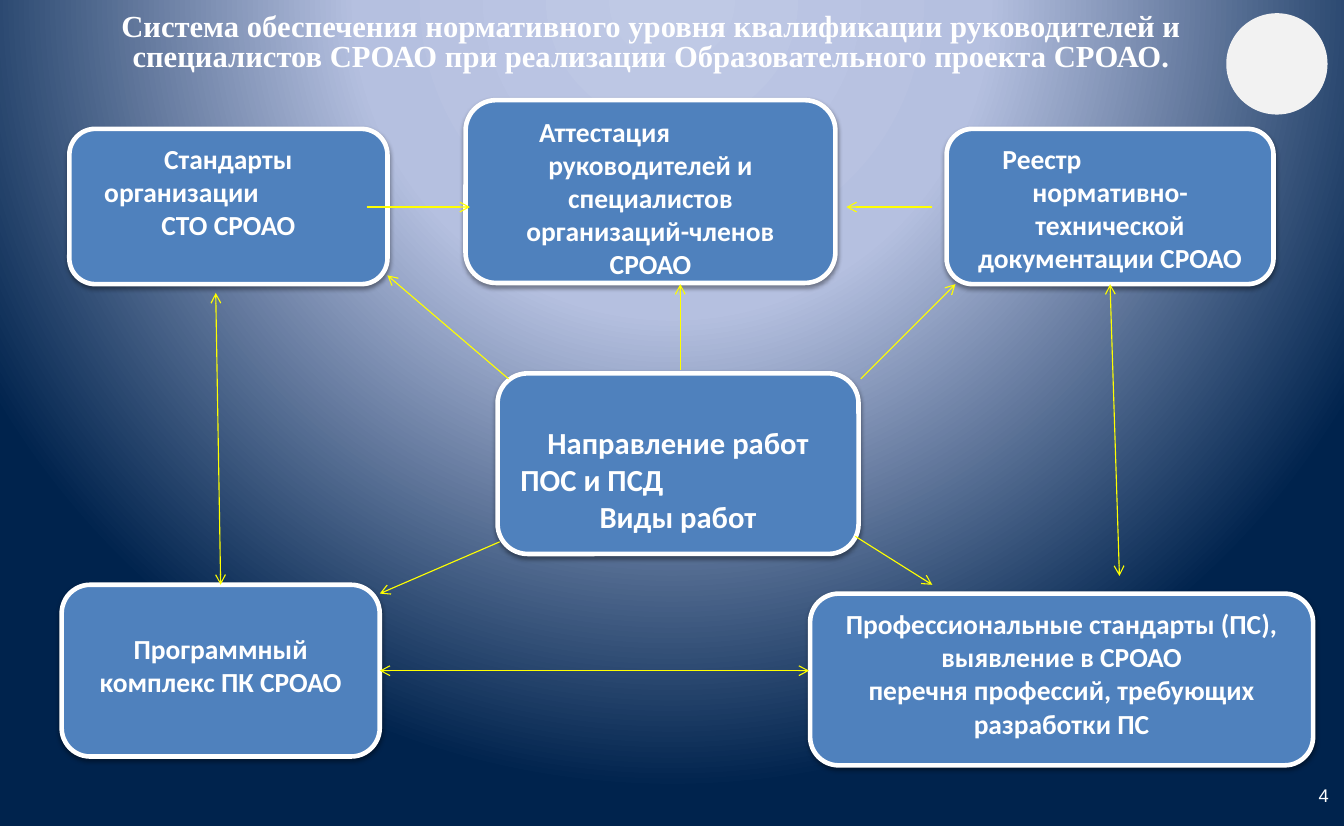
import pptx
import pptx.util
import pptx.oxml
import pptx.oxml.ns
import pptx.dml.color
import pptx.enum.shapes
import pptx.enum.text
from lxml import etree

Inches = pptx.util.Inches
Pt = pptx.util.Pt
SHAPES = pptx.enum.shapes.MSO_SHAPE
ALIGN = pptx.enum.text.PP_ALIGN
ANCHOR = pptx.enum.text.MSO_ANCHOR
qn = pptx.oxml.ns.qn
NS = pptx.oxml.ns.nsdecls("a", "p")

COLORS = {
    "box": "4F81BD", "white": "FFFFFF", "arrow": "FFFF00", "circle": "F2F2F2",
    "shadow": "000000", "glow": "BFC9E5", "haze": "B5C0E0", "night": "00234D",
}


def rgb(name):
    return pptx.dml.color.RGBColor.from_string(COLORS[name])


def style_text(paragraph, size, font, bold, align):
    paragraph.alignment = align
    for run in paragraph.runs:
        run.font.size = Pt(size)
        run.font.name = font
        run.font.bold = bold
        run.font.color.rgb = rgb("white")


deck = pptx.Presentation()
deck.slide_width = Inches(12.21)
deck.slide_height = Inches(7.5)
slide = deck.slides.add_slide(deck.slide_layouts[6])
shapes = slide.shapes

# Radial background
stops = "".join(
    f'<a:gs pos="{pos * 1000}"><a:srgbClr val="{COLORS[name]}"/></a:gs>'
    for pos, name in [(0, "glow"), (40, "haze"), (100, "night")])
background = pptx.oxml.parse_xml(
    f'<p:bg {NS}><p:bgPr><a:gradFill rotWithShape="1"><a:gsLst>{stops}</a:gsLst>'
    '<a:path path="circle"><a:fillToRect l="50000" t="-80000" r="50000" b="180000"/></a:path>'
    '</a:gradFill><a:effectLst/></p:bgPr></p:bg>')
slide.element.find(qn("p:cSld")).insert(0, background)

page_number = shapes.add_textbox(Inches(11.15), Inches(7.02), Inches(1.02), Inches(0.4))
page_number.text_frame.word_wrap = True
page_number.text_frame.vertical_anchor = ANCHOR.MIDDLE
page_number.text_frame.text = "4"
style_text(page_number.text_frame.paragraphs[0], 12, "Arial", False, ALIGN.RIGHT)

# Boxes: position, text size, top inset, lines as (text, left indent or None if centred)
BOXES = {
    "works": ((4.52, 3.39, 3.28, 1.64), 20, 0.38, [
        ("Направление работ", None), ("ПОС и ПСД", 0.03), ("Виды работ", None)]),
    "standards": ((0.63, 1.17, 2.89, 1.41), 18, 0.05, [
        ("Стандарты", None), ("организации", 0.15), ("СТО СРОАО", None)]),
    "attestation": ((4.23, 0.91, 3.36, 1.66), 18, 0.05, [
        ("Аттестация", 0.49),
        ("руководителей и специалистов организаций-членов СРОАО", None)]),
    "registry": ((8.6, 1.17, 2.97, 1.41), 18, 0.05, [
        ("Реестр", 0.34), ("нормативно-технической документации СРОАО", None)]),
    "software": ((0.56, 5.31, 2.89, 1.56), 18, 0.35, [
        ("Программный комплекс ПК СРОАО", None)]),
    "professions": ((7.36, 5.39, 4.57, 1.56), 18, 0.05, [
        ("Профессиональные стандарты (ПС), выявление в СРОАО", None),
        ("перечня профессий, требующих разработки ПС", None)]),
}
boxes = {}
for key, (place, size, top_inset, lines) in BOXES.items():
    box = shapes.add_shape(SHAPES.ROUNDED_RECTANGLE, *map(Inches, place))
    box.fill.solid()
    box.fill.fore_color.rgb = rgb("box")
    box.line.color.rgb = rgb("white")
    box.line.width = Pt(3)
    box.shadow.inherit = False
    box.element.spPr.find(qn("a:effectLst")).append(pptx.oxml.parse_xml(
        f'<a:outerShdw {NS} blurRad="{Pt(3.1)}" dist="{Pt(1.6)}" dir="5400000" rotWithShape="0">'
        f'<a:srgbClr val="{COLORS["shadow"]}"><a:alpha val="38000"/></a:srgbClr></a:outerShdw>'))
    frame = box.text_frame
    frame.word_wrap = True
    frame.vertical_anchor = ANCHOR.TOP
    frame.margin_top = Inches(top_inset)
    frame.text = "\n".join(text for text, indent in lines)
    for paragraph, (text, indent) in zip(frame.paragraphs, lines):
        style_text(paragraph, size, "Calibri", True,
                   ALIGN.CENTER if indent is None else ALIGN.LEFT)
        if indent is not None:
            paragraph._p.get_or_add_pPr().set("marL", str(Inches(indent)))
    boxes[key] = box

title = shapes.add_textbox(Inches(1), Inches(0.13), Inches(9.83), Inches(0.54)).text_frame
title.word_wrap = True
title.margin_left = title.margin_right = title.margin_top = title.margin_bottom = 0
title.text = ("Система обеспечения нормативного уровня квалификации руководителей и "
              "специалистов СРОАО при реализации Образовательного проекта СРОАО.")
title.paragraphs[0].line_spacing = 0.8
style_text(title.paragraphs[0], 20, "Times New Roman", True, ALIGN.CENTER)

# Arrows: start, end, two-headed, joined box and side at the start, then at the end
ARROWS = [
    ((7.77, 4.87), (8.47, 5.31), False, None, None),
    ((4.54, 4.92), (3.45, 5.39), False, None, None),
    ((3.33, 1.88), (4.27, 1.88), False, None, None),
    ((8.47, 1.88), (7.69, 1.88), False, None, None),
    ((4.62, 3.44), (3.52, 2.5), False, None, None),
    ((7.82, 3.44), (8.68, 2.58), False, None, None),
    ((6.18, 3.36), (6.18, 2.58), False, None, None),
    ((1.96, 2.66), (2, 5.31), True, None, ("software", 0)),
    ((3.45, 6.09), (7.35, 6.09), True, ("software", 3), None),
    ((10.09, 2.58), (10.17, 5.23), True, ("registry", 2), None),
]
for start, end, two_headed, start_join, end_join in ARROWS:
    arrow = shapes.add_connector(pptx.enum.shapes.MSO_CONNECTOR.STRAIGHT,
                                 *map(Inches, start + end))
    if start_join:
        arrow.begin_connect(boxes[start_join[0]], start_join[1])
    if end_join:
        arrow.end_connect(boxes[end_join[0]], end_join[1])
    arrow.line.color.rgb = rgb("arrow")
    arrow.line.width = Pt(0.75)
    outline = arrow.line._get_or_add_ln()
    for tip in ["a:headEnd", "a:tailEnd"] if two_headed else ["a:tailEnd"]:
        etree.SubElement(outline, qn(tip), type="arrow")
    etree.SubElement(arrow._element.spPr, qn("a:effectLst"))

emblem = shapes.add_shape(SHAPES.OVAL, Inches(11.14), Inches(0.12), Inches(0.92), Inches(0.92))
emblem.fill.solid()
emblem.fill.fore_color.rgb = rgb("circle")
emblem.line.fill.background()
emblem.shadow.inherit = False

deck.save("out.pptx")
